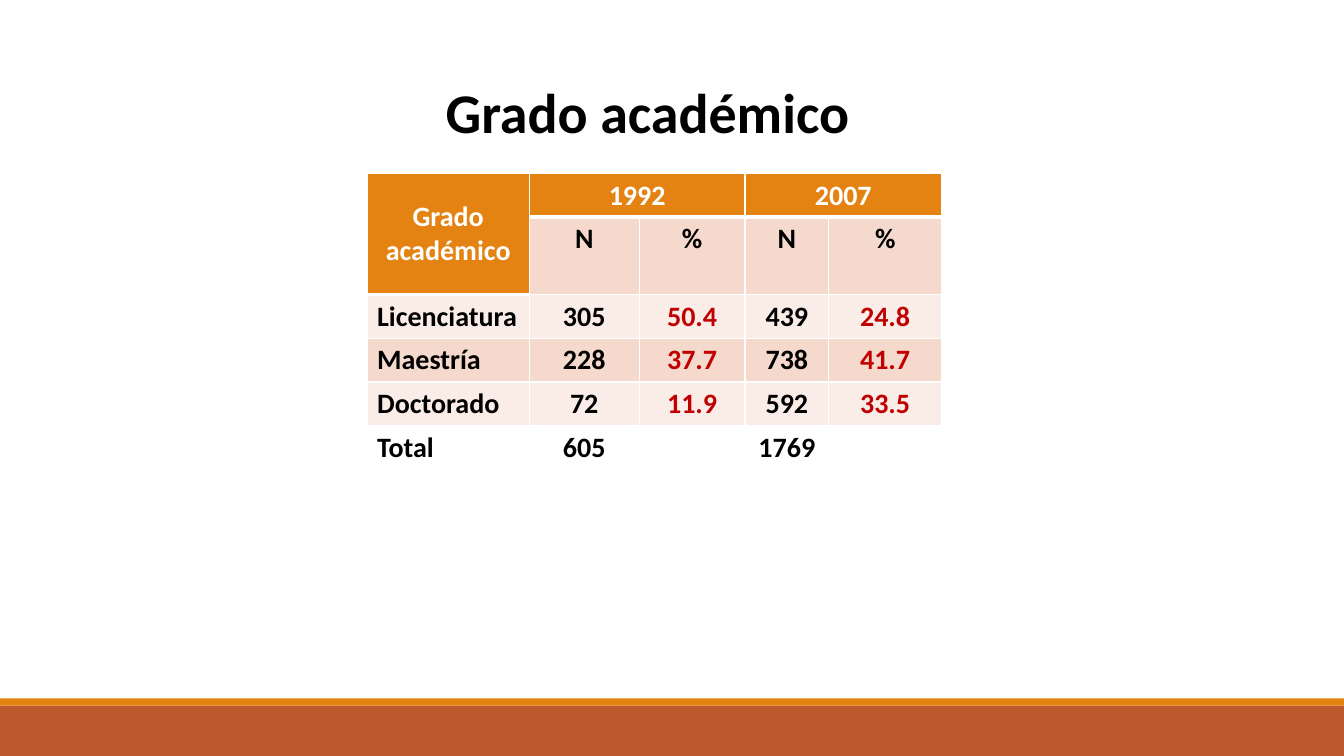
import dataclasses

import lxml.etree
import pptx
import pptx.dml.color
import pptx.enum.shapes
import pptx.enum.text
import pptx.oxml.ns
import pptx.slide
import pptx.table
import pptx.text.text
import pptx.util

Inches = pptx.util.Inches
Align = pptx.enum.text.PP_ALIGN

COLORS = {
    "white": "FFFFFF",
    "black": "000000",
    "orange": "E48312",
    "rust": "BD582C",
    "band": "F5D9CC",
    "light": "FAEDE7",
    "percent": "C00000",
}


@dataclasses.dataclass(frozen=True)
class Bar:
    top: float
    height: float
    color: str


@dataclasses.dataclass(frozen=True)
class Row:
    height: float
    values: tuple[str, ...] = ()
    fill: str = ""


@dataclasses.dataclass(frozen=True)
class Span:
    first: tuple[int, int]
    last: tuple[int, int]


BARS = [Bar(7, 0.5, "rust"), Bar(6.93, 0.07, "orange")]
COLUMN_WIDTHS = [1.61, 1.09, 1.05, 0.83, 1.12, 1.06, 0.89]
PERCENT_COLUMNS = (2, 4)
DEGREE_COLUMNS = 5
ROWS = [
    Row(0.2, ("Grado académico", "1992", "", "2007", ""), "orange"),
    Row(0.2, ("", "N", "%", "N", "%"), "band"),
    Row(0.41, ("Licenciatura", "305", "50.4", "439", "24.8"), "light"),
    Row(0.41, ("Maestría", "228", "37.7", "738", "41.7"), "band"),
    Row(0.41, ("Doctorado", "72", "11.9", "592", "33.5"), "light"),
    Row(0.41, ("Total", "605", "", "1769", "")),
    Row(0.41),
    Row(0.52),
    Row(0),
]
SPANS = [
    Span((0, 0), (1, 0)),
    Span((0, 1), (0, 2)),
    Span((0, 3), (0, 4)),
    Span((7, 0), (8, 0)),
]


def rgb(color: str) -> pptx.dml.color.RGBColor:
    return pptx.dml.color.RGBColor.from_string(COLORS[color])


def add_text(paragraph: pptx.text.text._Paragraph, text: str, size: int, color: str) -> None:
    run = paragraph.add_run()
    run.text = text
    run.font.name = "Calibri"
    run.font.size = pptx.util.Pt(size)
    run.font.bold = True
    run.font.color.rgb = rgb(color)


def add_bar(slide: pptx.slide.Slide, bar: Bar) -> None:
    stripe = slide.shapes.add_shape(
        pptx.enum.shapes.MSO_SHAPE.RECTANGLE,
        0, Inches(bar.top), Inches(13.33), Inches(bar.height),
    )
    stripe.shadow.inherit = False
    stripe.fill.solid()
    stripe.fill.fore_color.rgb = rgb(bar.color)
    stripe.line.fill.background()


def add_title(slide: pptx.slide.Slide) -> None:
    title = slide.shapes.title
    title.left, title.top = Inches(4.32), Inches(0.72)
    title.width, title.height = Inches(4.25), Inches(0.77)
    frame = title.text_frame
    frame.word_wrap = False
    frame.auto_size = pptx.enum.text.MSO_AUTO_SIZE.SHAPE_TO_FIT_TEXT
    frame.vertical_anchor = pptx.enum.text.MSO_ANCHOR.TOP
    frame.paragraphs[0].alignment = Align.LEFT
    add_text(frame.paragraphs[0], "Grado académico", 40, "black")


def set_borders(cell: pptx.table._Cell, bottom_width: int) -> None:
    qn = pptx.oxml.ns.qn
    properties = cell._tc.get_or_add_tcPr()
    for side, width in (("L", 1), ("R", 1), ("T", 1), ("B", bottom_width)):
        border = lxml.etree.SubElement(
            properties, qn(f"a:ln{side}"), w=str(pptx.util.Pt(width))
        )
        fill = lxml.etree.SubElement(border, qn("a:solidFill"))
        lxml.etree.SubElement(fill, qn("a:srgbClr"), val=COLORS["white"])


def fill_cell(cell: pptx.table._Cell, row: int, column: int) -> None:
    values, color = ROWS[row].values, ROWS[row].fill
    is_corner = column == 0 and row < 2
    set_borders(cell, 3 if row == 0 or is_corner else 1)
    if is_corner:
        color = "orange"
        cell.vertical_anchor = pptx.enum.text.MSO_ANCHOR.MIDDLE
    if color and column < DEGREE_COLUMNS:
        cell.fill.solid()
        cell.fill.fore_color.rgb = rgb(color)
    else:
        cell.fill.background()
    if column >= len(values) or not values[column]:
        return
    text_color = "black"
    if row == 0:
        text_color = "white"
    elif row > 1 and column in PERCENT_COLUMNS:
        text_color = "percent"
    paragraph = cell.text_frame.paragraphs[0]
    paragraph.alignment = Align.CENTER if column or is_corner else Align.LEFT
    add_text(paragraph, values[column], 20, text_color)


def add_degree_table(slide: pptx.slide.Slide) -> None:
    degrees = slide.shapes.add_table(
        len(ROWS), len(COLUMN_WIDTHS),
        Inches(3.64), Inches(1.72), Inches(7.64), Inches(3.99),
    ).table
    degrees.first_row = False
    degrees.horz_banding = False
    for column, width in enumerate(COLUMN_WIDTHS):
        degrees.columns[column].width = Inches(width)
    for index, row in enumerate(ROWS):
        degrees.rows[index].height = Inches(row.height)
        for column in range(len(COLUMN_WIDTHS)):
            fill_cell(degrees.cell(index, column), index, column)
    for span in SPANS:
        degrees.cell(*span.first).merge(degrees.cell(*span.last))


def main() -> None:
    presentation = pptx.Presentation()
    presentation.slide_width = Inches(13.33)
    presentation.slide_height = Inches(7.5)
    slide = presentation.slides.add_slide(presentation.slide_layouts[5])
    for bar in BARS:
        add_bar(slide, bar)
    add_degree_table(slide)
    add_title(slide)
    presentation.save("out.pptx")


if __name__ == "__main__":
    main()
